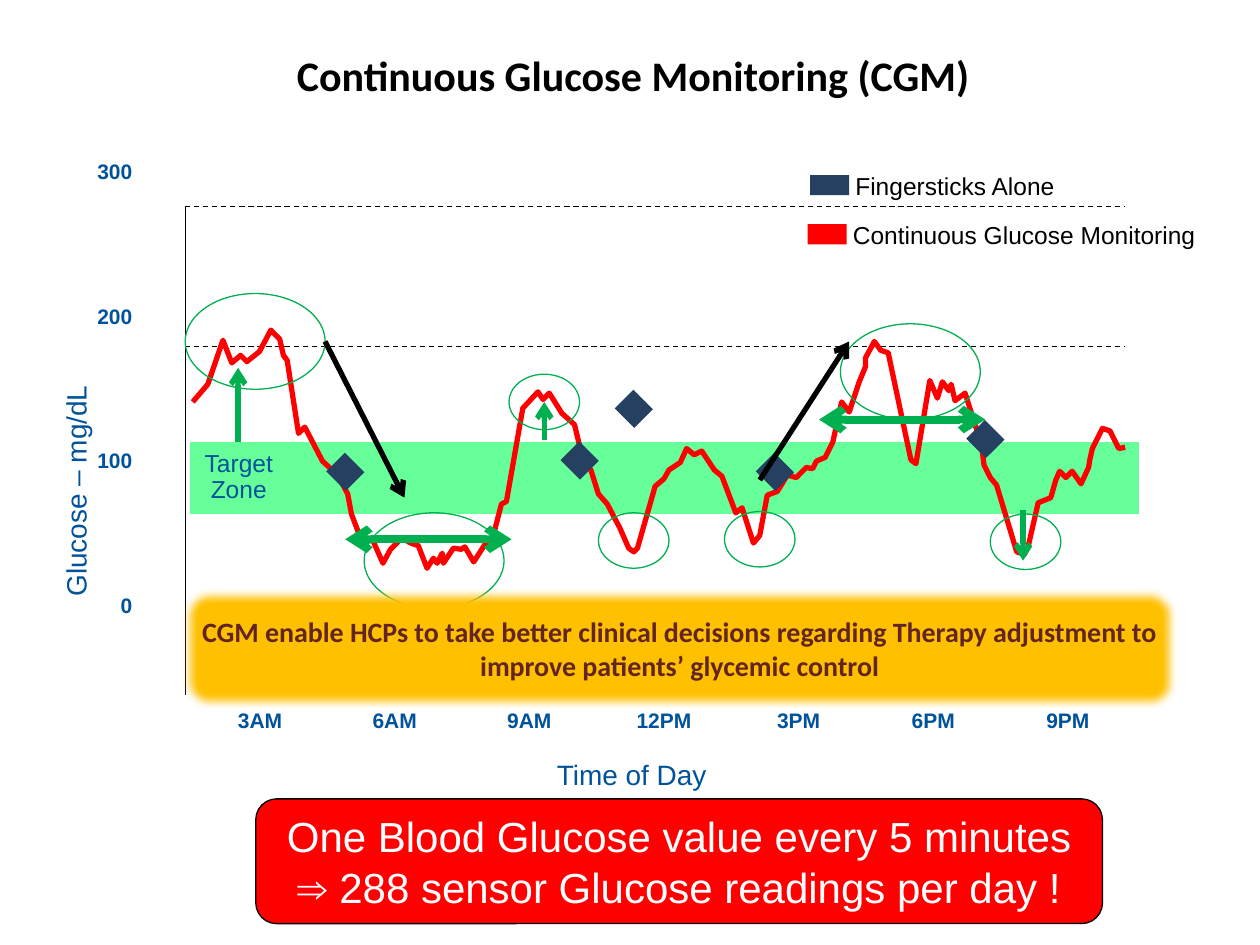
from lxml import etree
from pptx import Presentation, util as u
from pptx.dml.color import RGBColor
from pptx.enum import dml, shapes, text
from pptx.oxml.ns import qn

Inches = u.Inches
HUES = {"black": "000000", "white": "FFFFFF", "blue": "00529B", "navy": "254061",
        "red": "FF0000", "mint": "66FF99", "green": "00B050", "gold": "FFC000",
        "brown": "632523"}
KIND = shapes.MSO_SHAPE
MID = text.MSO_ANCHOR.MIDDLE
LEFT, MIDDLE, RIGHT = text.PP_ALIGN.LEFT, text.PP_ALIGN.CENTER, text.PP_ALIGN.RIGHT
LABEL = {"size": 12, "hue": "blue", "bold": True}
AXIS = {"size": 16, "hue": "blue"}

TRACE = [
    (1.53, 3.19), (1.65, 3.05), (1.77, 2.7), (1.84, 2.88), (1.91, 2.82), (1.96, 2.87),
    (2.06, 2.79), (2.15, 2.62), (2.22, 2.69), (2.25, 2.82), (2.28, 2.86), (2.37, 3.44),
    (2.42, 3.39), (2.56, 3.66), (2.68, 3.77), (2.76, 3.92), (2.79, 4.08), (2.87, 4.29),
    (2.96, 4.29), (3.04, 4.47), (3.1, 4.36), (3.19, 4.27), (3.26, 4.31), (3.32, 4.33),
    (3.39, 4.51), (3.44, 4.43), (3.47, 4.47), (3.51, 4.39), (3.52, 4.47), (3.6, 4.35),
    (3.66, 4.36), (3.69, 4.34), (3.76, 4.46), (3.85, 4.32), (3.89, 4.35), (3.98, 4),
    (4.02, 3.98), (4.15, 3.24), (4.27, 3.11), (4.31, 3.17), (4.36, 3.12), (4.46, 3.28),
    (4.56, 3.37), (4.63, 3.66), (4.69, 3.73), (4.75, 3.92), (4.82, 4), (4.92, 4.19),
    (4.99, 4.35), (5.03, 4.38), (5.06, 4.35), (5.2, 3.86), (5.27, 3.8), (5.31, 3.73),
    (5.4, 3.67), (5.45, 3.56), (5.51, 3.61), (5.57, 3.58), (5.67, 3.73), (5.73, 3.78),
    (5.84, 4.07), (5.89, 4.03), (5.98, 4.31), (6.03, 4.25), (6.09, 3.93), (6.17, 3.9),
    (6.25, 3.77), (6.32, 3.79), (6.4, 3.71), (6.45, 3.72), (6.48, 3.66), (6.55, 3.63),
    (6.61, 3.51), (6.68, 3.19), (6.74, 3.27), (6.82, 3.03), (6.87, 2.91), (6.87, 2.84),
    (6.94, 2.71), (6.99, 2.78), (7.05, 2.8), (7.23, 3.65), (7.27, 3.68), (7.38, 3.02),
    (7.44, 3.16), (7.48, 3.03), (7.53, 3.1), (7.55, 3.05), (7.58, 3.18), (7.66, 3.12),
    (7.79, 3.53), (7.81, 3.69), (7.86, 3.79), (7.91, 3.85), (8.07, 4.38), (8.13, 4.4),
    (8.16, 4.34), (8.24, 3.99), (8.34, 3.95), (8.38, 3.81), (8.41, 3.74), (8.46, 3.79),
    (8.51, 3.74), (8.58, 3.84), (8.64, 3.71), (8.65, 3.65), (8.67, 3.56), (8.75, 3.4),
    (8.81, 3.42), (8.88, 3.56), (8.93, 3.55)]


def rgb(hue):
    return RGBColor.from_string(HUES[hue])


def apply(item, values):
    for name, value in values.items():
        setattr(item, name, value)


def write(frame, words, size, hue, bold=False, face="Arial", align=LEFT, lead=None):
    """Fill a text frame, one paragraph per line of words."""
    frame.text = words
    for para in frame.paragraphs:
        apply(para, {"alignment": align, "line_spacing": lead})
        font = para.runs[0].font
        apply(font, {"name": face, "size": u.Pt(size), "bold": bold})
        font.color.rgb = rgb(hue)


def inset(item, gap):
    sides = ("margin_left", "margin_top", "margin_right", "margin_bottom")
    apply(item, dict.fromkeys(sides, Inches(gap)))


def add_text(slide, at, words, wrap=True, anchor=text.MSO_ANCHOR.TOP, turn=0, **style):
    box = slide.shapes.add_textbox(*map(Inches, at))
    box.rotation = turn
    apply(box.text_frame, {"word_wrap": wrap, "vertical_anchor": anchor})
    if not wrap:
        inset(box.text_frame, 0)
    write(box.text_frame, words, **style)


def paint(shape, fill=None, line=None, width=0.75):
    shape.shadow.inherit = False
    for part, hue in ((shape.fill, fill), (shape.line.fill, line)):
        if hue:
            part.solid()
            part.fore_color.rgb = rgb(hue)
        else:
            part.background()
    if line:
        shape.line.width = u.Pt(width)


def add_shape(slide, kind, at, fill=None, line=None, turn=0):
    shape = slide.shapes.add_shape(kind, *map(Inches, at))
    paint(shape, fill, line)
    shape.rotation = turn
    return shape


def add_panel(slide, at, words, fill, line=None, **style):
    panel = add_shape(slide, KIND.ROUNDED_RECTANGLE, at, fill, line)
    apply(panel.text_frame, {"word_wrap": True, "vertical_anchor": MID})
    write(panel.text_frame, words, align=MIDDLE, **style)
    return panel


def soften(shape, points):
    """Blur the edge of a shape."""
    glow = shape._element.spPr.find(qn("a:effectLst"))
    etree.SubElement(glow, qn("a:softEdge"), rad=str(u.Pt(points)))


def add_line(slide, start, end, hue="black", width=0.75, dash=False, tips=()):
    ends = map(Inches, (*start, *end))
    line = slide.shapes.add_connector(shapes.MSO_CONNECTOR.STRAIGHT, *ends)
    line.line.color.rgb = rgb(hue)
    line.line.width = u.Pt(width)
    if dash:
        line.line.dash_style = dml.MSO_LINE.DASH
    for tip in tips:
        etree.SubElement(line.line._get_or_add_ln(), qn(f"a:{tip}"), type="arrow")
    etree.SubElement(line._element.spPr, qn("a:effectLst"))


def add_scale(slide, at, rows, align):
    """Place axis labels in a table without fill."""
    frame = slide.shapes.add_table(len(rows), len(rows[0]), *map(Inches, at))
    grid = frame.table
    apply(grid, {"first_row": False, "horz_banding": False})
    for r, row in enumerate(rows):
        for c, words in enumerate(row):
            cell = grid.cell(r, c)
            cell.fill.background()
            cell.vertical_anchor = MID
            inset(cell, 0)
            if words:
                write(cell.text_frame, words, align=align, **LABEL)


def add_trace(slide):
    spots = [(Inches(x), Inches(y)) for x, y in TRACE]
    pen = slide.shapes.build_freeform(*spots[0])
    pen.add_line_segments(spots[1:], close=False)
    paint(pen.convert_to_shape(), line="red", width=3)


def add_sticks(slide, spots):
    for x, y in spots:
        add_shape(slide, KIND.RECTANGLE, (x, y, 0.22, 0.21), "navy", turn=45)


def add_rings(slide, spots, wide, high):
    for x, y in spots:
        add_shape(slide, KIND.OVAL, (x, y, wide, high), line="green")


def main():
    deck = Presentation()
    apply(deck, {"slide_width": Inches(10), "slide_height": Inches(7.5)})
    slide = deck.slides.add_slide(deck.slide_layouts[6])

    add_text(slide, (0.22, 0.17, 9.61, 0.85), "Continuous Glucose Monitoring (CGM)",
             anchor=MID, size=24, hue="black", bold=True, face="Calibri", align=MIDDLE)
    levels = ["300", "", "200", "", "100", "", "0"]
    add_scale(slide, (0.52, 1.08, 0.53, 4.02), [[n] for n in levels], RIGHT)
    hours = ["3AM", "6AM", "9AM", "12PM", "3PM", "6PM", "9PM"]
    add_scale(slide, (1.53, 5.55, 7.48, 0.34), [hours], MIDDLE)

    for x, y, hue, words in ((6.43, 1.39, "navy", "Fingersticks Alone"),
                             (6.41, 1.78, "red", "Continuous Glucose Monitoring")):
        add_shape(slide, KIND.RECTANGLE, (x, y, 0.31, 0.16), hue)
        add_text(slide, (x + 0.26, y - 0.08, 3.18, 0.34), words, size=14, hue="black")

    add_text(slide, (4.42, 6.01, 1.65, 0.27), "Time of Day", wrap=False, **AXIS)
    add_line(slide, (1.47, 1.64), (1.47, 5.52))
    for y in (1.64, 2.75):
        add_line(slide, (1.47, y), (8.93, y), dash=True)
    add_text(slide, (-0.19, 3.71, 1.68, 0.37), "Glucose – mg/dL", wrap=False,
             turn=270, **AXIS)
    add_shape(slide, KIND.RECTANGLE, (1.51, 3.51, 7.53, 0.57), "mint")
    add_trace(slide)
    add_sticks(slide, [(2.63, 3.64), (4.49, 3.55), (4.92, 3.14), (6.04, 3.64), (7.71, 3.38)])
    add_text(slide, (1.45, 3.53, 0.89, 0.52), "Target Zone", size=14, hue="blue",
             align=MIDDLE, lead=0.9)
    add_panel(slide, (2.03, 6.34, 6.72, 0.99),
              "One Blood Glucose value every 5 minutes\n"
              "⇒ 288 sensor Glucose readings per day !",
              "red", "black", size=24, hue="white")

    add_rings(slide, [(1.47, 2.33), (6.67, 2.57), (2.89, 4.07)], 1.11, 0.76)
    add_rings(slide, [(4.75, 4.07), (5.75, 4.06), (7.86, 4.08), (4.04, 2.97)], 0.56, 0.44)
    for start, end in (((2.58, 2.71), (3.21, 3.95)), ((6.03, 3.81), (6.74, 2.71))):
        add_line(slide, start, end, width=3, tips=["tailEnd"])
    for x, y in ((2.74, 4.28), (6.5, 3.33)):
        add_line(slide, (x, y), (x + 1.32, y), "green", 4.5, tips=["headEnd", "tailEnd"])

    note = add_panel(slide, (1.45, 4.67, 7.89, 0.95),
                     "CGM enable HCPs to take better clinical decisions regarding Therapy "
                     "adjustment to improve patients’ glycemic control",
                     "gold", size=16, hue="brown", bold=True, face="Calibri")
    inset(note.text_frame, 0.1)
    soften(note, 5)
    for x, y, end in ((1.89, 3.51, 2.92), (4.32, 3.49, 3.19), (8.12, 4.05, 4.45)):
        add_line(slide, (x, y), (x, end), "green", 3, tips=["tailEnd"])

    deck.save("out.pptx")


if __name__ == "__main__":
    main()
